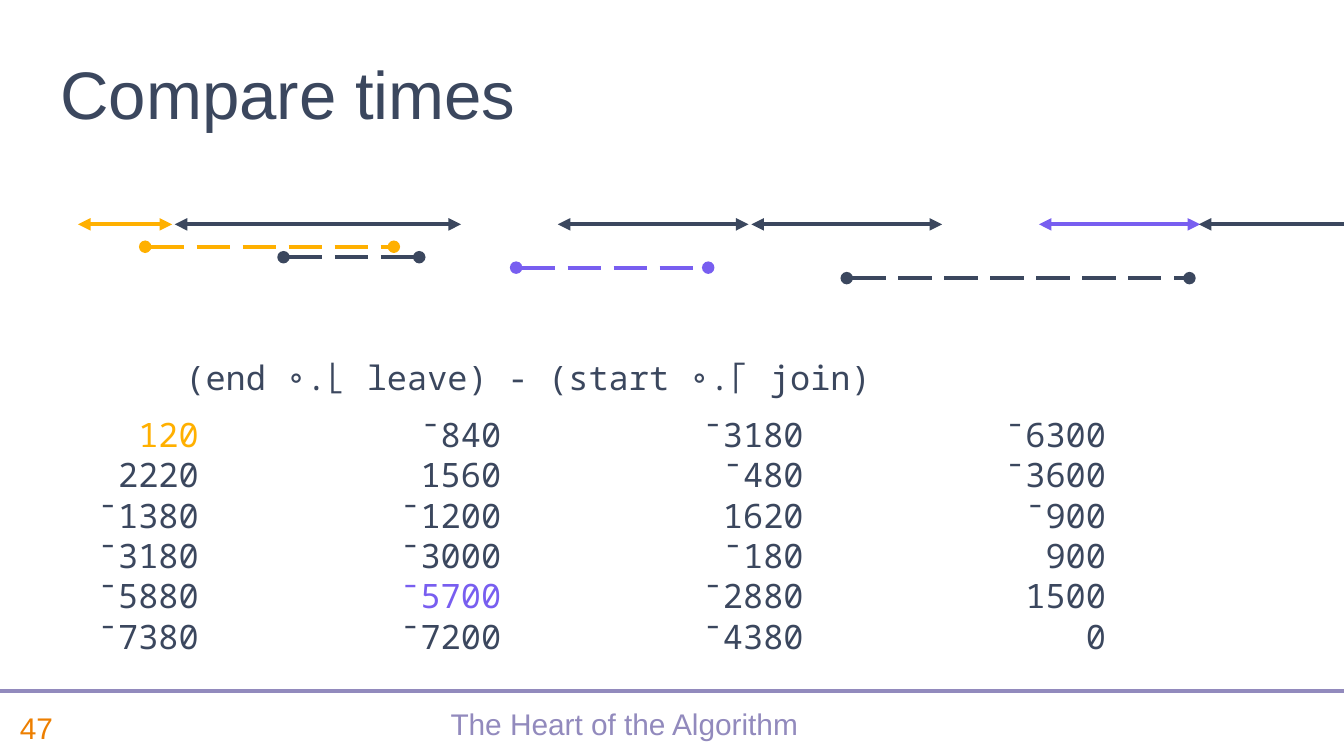
from lxml.etree import SubElement
from pptx import Presentation
from pptx.dml.color import RGBColor
from pptx.enum.dml import MSO_LINE
from pptx.enum.shapes import MSO_CONNECTOR
from pptx.enum.text import MSO_ANCHOR, PP_ALIGN
from pptx.oxml.ns import qn
from pptx.util import Pt

# Content
COLORS = {"ink": "3B475E", "gold": "FFB000", "violet": "785EF0",
          "lilac": "928ABD", "orange": "ED7F00"}
TITLE = "Compare times"
FORMULA = "(end ∘.⌊ leave) - (start ∘.⌈ join)"
FOOTER = "The Heart of the Algorithm"
PAGE_NUMBER = "47"

MEETINGS = [  # start, end, color
    (41.8, 92.2, "gold"),
    (93.6, 247, "ink"),
    (298.8, 401, "ink"),
    (402.5, 504.7, "ink"),
    (556.6, 643, "violet"),
    (642.2, 729.4, "ink"),
]
ATTENDANCES = [  # join, leave, color
    (77.8, 211, "gold"),
    (151.9, 224.6, "ink"),
    (276.5, 379.4, "violet"),
    (453.6, 637.2, "ink"),
]
OVERLAPS = [
    ("120", "¯840", "¯3180", "¯6300"),
    ("2220", "1560", "¯480", "¯3600"),
    ("¯1380", "¯1200", "1620", "¯900"),
    ("¯3180", "¯3000", "¯180", "900"),
    ("¯5880", "¯5700", "¯2880", "1500"),
    ("¯7380", "¯7200", "¯4380", "0"),
]
ACCENTS = {"120": "gold", "¯5700": "violet"}

# Layout
WIDTH, HEIGHT = 720, 405
MEETING_Y = 120.2
ATTENDANCE_Y, ATTENDANCE_STEP = 132.2, 5.6
RULE_Y = 370
FOOTER_TOP, FOOTER_HEIGHT = 373.7, 31.7
CHAR_WIDTH = 10.8
COLUMN_ENDS = [CHAR_WIDTH * (7 + 15 * column) for column in range(4)]

deck = Presentation()
deck.slide_width, deck.slide_height = Pt(WIDTH), Pt(HEIGHT)
slide = deck.slides.add_slide(deck.slide_layouts[6])


def rgb(color):
    return RGBColor.from_string(COLORS[color])


def add_text(text, *, box, size=18, font="Arial", color="ink",
             anchor=MSO_ANCHOR.TOP, align=PP_ALIGN.LEFT, spacing=None,
             tab_stops=(), accents=None):
    """Each line is a paragraph; a tab-separated cell may have an accent color."""
    frame = slide.shapes.add_textbox(*map(Pt, box)).text_frame
    frame.word_wrap = True
    frame.vertical_anchor = anchor
    for number, line in enumerate(text.split("\n")):
        paragraph = frame.add_paragraph() if number else frame.paragraphs[0]
        paragraph.alignment = align
        if spacing:
            paragraph.line_spacing = spacing
        if tab_stops:
            tab_list = SubElement(paragraph._p.get_or_add_pPr(), qn("a:tabLst"))
            for stop in tab_stops:
                SubElement(tab_list, qn("a:tab"), pos=str(int(Pt(stop))), algn="r")
        for cell in line.split("\t"):
            run = paragraph.add_run()
            run.text = f"\t{cell}" if tab_stops else cell
            run.font.size = Pt(size)
            run.font.name = font
            run.font.color.rgb = rgb((accents or {}).get(cell, color))


def add_line(start, end, y, color, ends=None, dash=None):
    connector = slide.shapes.add_connector(
        MSO_CONNECTOR.STRAIGHT, Pt(start), Pt(y), Pt(end), Pt(y))
    connector.line.color.rgb = rgb(color)
    connector.line.width = Pt(2.25)
    if dash:
        connector.line.dash_style = dash
    if ends:
        outline = connector.line._get_or_add_ln()
        for side in ("a:headEnd", "a:tailEnd"):
            SubElement(outline, qn(side), type=ends)
    SubElement(connector._element.spPr, qn("a:effectLst"))


# Footer
add_text(FOOTER, box=(56.2, FOOTER_TOP, 556.6, FOOTER_HEIGHT), size=16,
         color="lilac", anchor=MSO_ANCHOR.MIDDLE, align=PP_ALIGN.CENTER, spacing=0.8)
add_text(PAGE_NUMBER, box=(3.6, FOOTER_TOP, 52.6, FOOTER_HEIGHT), size=16,
         color="orange", anchor=MSO_ANCHOR.MIDDLE)
add_line(0, WIDTH, RULE_Y, "lilac")

# Timeline
for start, end, color in MEETINGS:
    add_line(start, end, MEETING_Y, color, ends="triangle")
for level, (join, leave, color) in enumerate(ATTENDANCES):
    add_line(join, leave, ATTENDANCE_Y + level * ATTENDANCE_STEP, color,
             ends="oval", dash=MSO_LINE.LONG_DASH)

# Title, overlap matrix and formula
add_text(TITLE, box=(25.2, 20.9, 551.5, 54), size=36, anchor=MSO_ANCHOR.BOTTOM)
add_text("\n".join("\t".join(row) for row in OVERLAPS),
         box=(23.8, 218.2, 654.5, 138.2), font="Noto Sans Mono",
         tab_stops=COLUMN_ENDS, accents=ACCENTS)
add_text(FORMULA, box=(92.2, 187.9, 507.6, 28.8), font="Noto Sans Mono")

deck.save("out.pptx")
